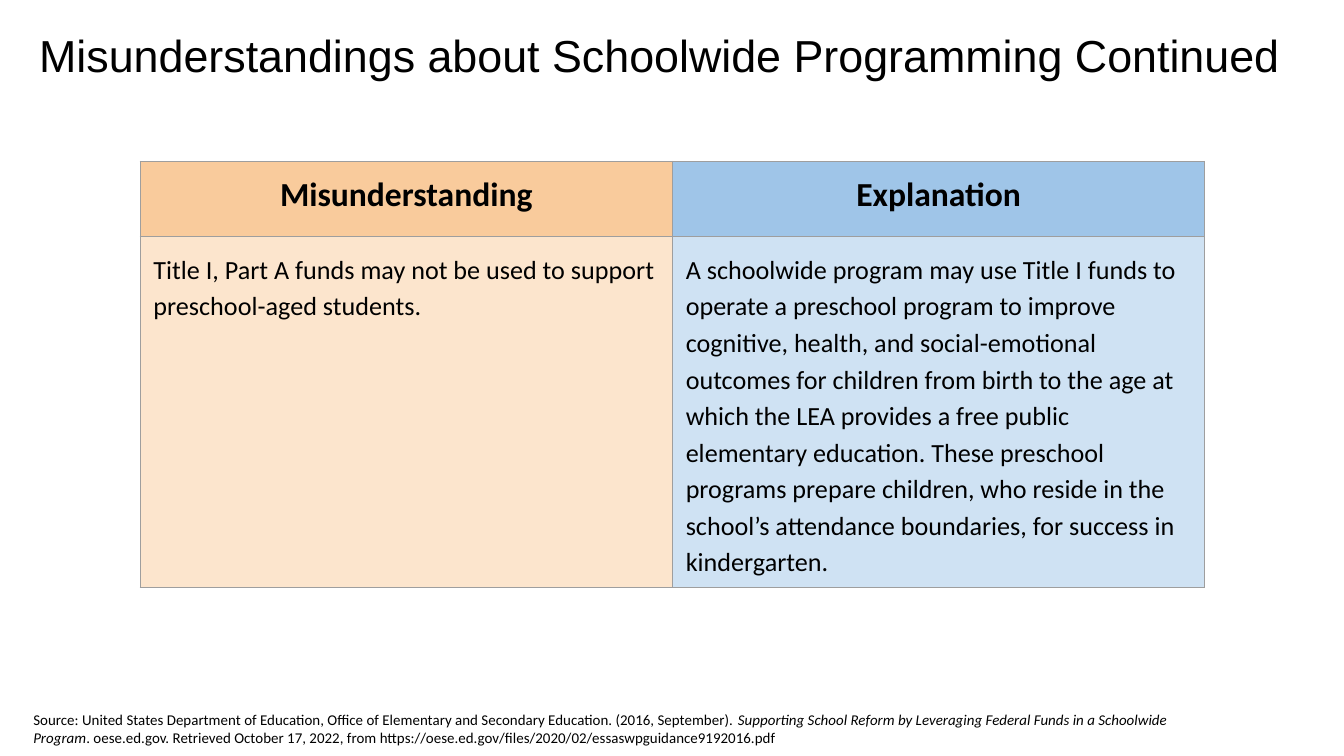
"""Build a slide that sets a schoolwide programming misunderstanding beside its explanation."""
import dataclasses
import typing

import lxml.etree
import pptx
import pptx.dml.color
import pptx.enum.text
import pptx.oxml.ns
import pptx.util

Cm = pptx.util.Cm
Pt = pptx.util.Pt
ALIGN = pptx.enum.text.PP_ALIGN

COLOURS = {
    "text": "000000",
    "border": "9E9E9E",
    "misunderstanding_head": "F9CB9C",
    "misunderstanding_body": "FCE5CD",
    "explanation_head": "9FC5E8",
    "explanation_body": "CFE2F3",
}
MARGINS = ("margin_left", "margin_top", "margin_right", "margin_bottom")
CELL_INSET = Cm(0.25)
BORDER_WIDTH = Pt(0.75)

TITLE_FONT = {"name": "Arial", "size": Pt(24)}
HEAD_FONT = {"name": "Calibri", "size": Pt(18), "bold": True}
BODY_FONT = {"name": "Calibri", "size": Pt(14), "bold": False}
SOURCE_FONT = {"name": "Calibri", "size": Pt(8)}

HEAD_PARA = {"alignment": ALIGN.CENTER}
BODY_PARA = {"alignment": ALIGN.LEFT, "line_spacing": 1.15}


@dataclasses.dataclass
class Span:
    text: str
    italic: bool = False


@dataclasses.dataclass
class TextBox:
    left: float
    top: float
    width: float
    height: float
    inset: float
    spans: list[Span]
    font: dict[str, typing.Any]
    para: dict[str, typing.Any]


@dataclasses.dataclass
class Column:
    key: str
    heading: str
    body: str
    space_after: int = 0


TITLE = TextBox(
    0.74, 0.64, 23.98, 1.88, 0,
    [Span("Misunderstandings about Schoolwide Programming Continued")],
    TITLE_FONT, {"line_spacing": 0.9},
)
SOURCE = TextBox(
    0.38, 13.18, 22.17, 1.19, 0.25,
    [
        Span("Source: United States Department of Education, Office of Elementary "
             "and Secondary Education. (2016, September). "),
        Span("Supporting School Reform by Leveraging Federal Funds in a "
             "Schoolwide Program", italic=True),
        Span(". oese.ed.gov. Retrieved October 17, 2022, from "
             "https://oese.ed.gov/files/2020/02/essaswpguidance9192016.pdf"),
    ],
    SOURCE_FONT, {},
)
COLUMNS = [
    Column(
        "misunderstanding", "Misunderstanding",
        "Title I, Part A funds may not be used to support preschool-aged students.",
    ),
    Column(
        "explanation", "Explanation",
        "A schoolwide program may use Title I funds to operate a preschool program "
        "to improve cognitive, health, and social-emotional outcomes for children "
        "from birth to the age at which the LEA provides a free public elementary "
        "education. These preschool programs prepare children, who reside in the "
        "school’s attendance boundaries, for success in kindergarten.",
        space_after=10,
    ),
]
ROW_HEIGHTS = (Cm(1.42), Cm(6.53))
COLUMN_WIDTH = Cm(10.06)


def apply(target: typing.Any, values: dict[str, typing.Any]) -> None:
    """Set every named attribute on the target."""
    for name, value in values.items():
        setattr(target, name, value)


def write(para: typing.Any, spans: list[Span], font: dict[str, typing.Any]) -> None:
    """Add the spans to a paragraph in one font."""
    for item in spans:
        span = para.add_run()
        span.text = item.text
        apply(span.font, font | {"italic": item.italic})
        span.font.color.rgb = pptx.dml.color.RGBColor.from_string(COLOURS["text"])


def draw_text_box(page: typing.Any, item: TextBox) -> None:
    """Draw one wrapped text box."""
    box = page.shapes.add_textbox(
        Cm(item.left), Cm(item.top), Cm(item.width), Cm(item.height))
    frame = box.text_frame
    apply(frame, {"word_wrap": True} | dict.fromkeys(MARGINS, Cm(item.inset)))
    apply(frame.paragraphs[0], item.para)
    write(frame.paragraphs[0], item.spans, item.font)


def add_borders(cell: typing.Any) -> None:
    """Outline all four sides of a cell."""
    properties = cell._tc.get_or_add_tcPr()
    for position, side in enumerate(("a:lnL", "a:lnR", "a:lnT", "a:lnB")):
        line = lxml.etree.Element(pptx.oxml.ns.qn(side), w=str(int(BORDER_WIDTH)))
        fill = lxml.etree.SubElement(line, pptx.oxml.ns.qn("a:solidFill"))
        lxml.etree.SubElement(
            fill, pptx.oxml.ns.qn("a:srgbClr"), val=COLOURS["border"])
        properties.insert(position, line)


def draw_cell(cell: typing.Any, text: str, colour: str,
              font: dict[str, typing.Any], layout: dict[str, typing.Any]) -> None:
    """Fill, outline and write one table cell."""
    apply(cell, dict.fromkeys(MARGINS, CELL_INSET))
    cell.fill.solid()
    cell.fill.fore_color.rgb = pptx.dml.color.RGBColor.from_string(COLOURS[colour])
    add_borders(cell)
    para = cell.text_frame.paragraphs[0]
    apply(para, layout)
    write(para, [Span(text)], font)


def draw_table(page: typing.Any, columns: list[Column]) -> None:
    """Draw the comparison table with a heading row and a body row."""
    table = page.shapes.add_table(
        len(ROW_HEIGHTS), len(columns), Cm(2.65), Cm(3.05),
        COLUMN_WIDTH * len(columns), sum(ROW_HEIGHTS)).table
    for row, height in zip(table.rows, ROW_HEIGHTS):
        row.height = height
    for index, column in enumerate(columns):
        table.columns[index].width = COLUMN_WIDTH
        body_para = BODY_PARA | {"space_after": Pt(column.space_after)}
        draw_cell(table.cell(0, index), column.heading,
                  f"{column.key}_head", HEAD_FONT, HEAD_PARA)
        draw_cell(table.cell(1, index), column.body,
                  f"{column.key}_body", BODY_FONT, body_para)


def main() -> None:
    """Build and save the deck."""
    deck = pptx.Presentation()
    apply(deck, {"slide_width": Cm(25.4), "slide_height": Cm(14.29)})
    page = deck.slides.add_slide(deck.slide_layouts[6])
    draw_text_box(page, TITLE)
    draw_table(page, COLUMNS)
    draw_text_box(page, SOURCE)
    deck.save("out.pptx")


if __name__ == "__main__":
    main()
